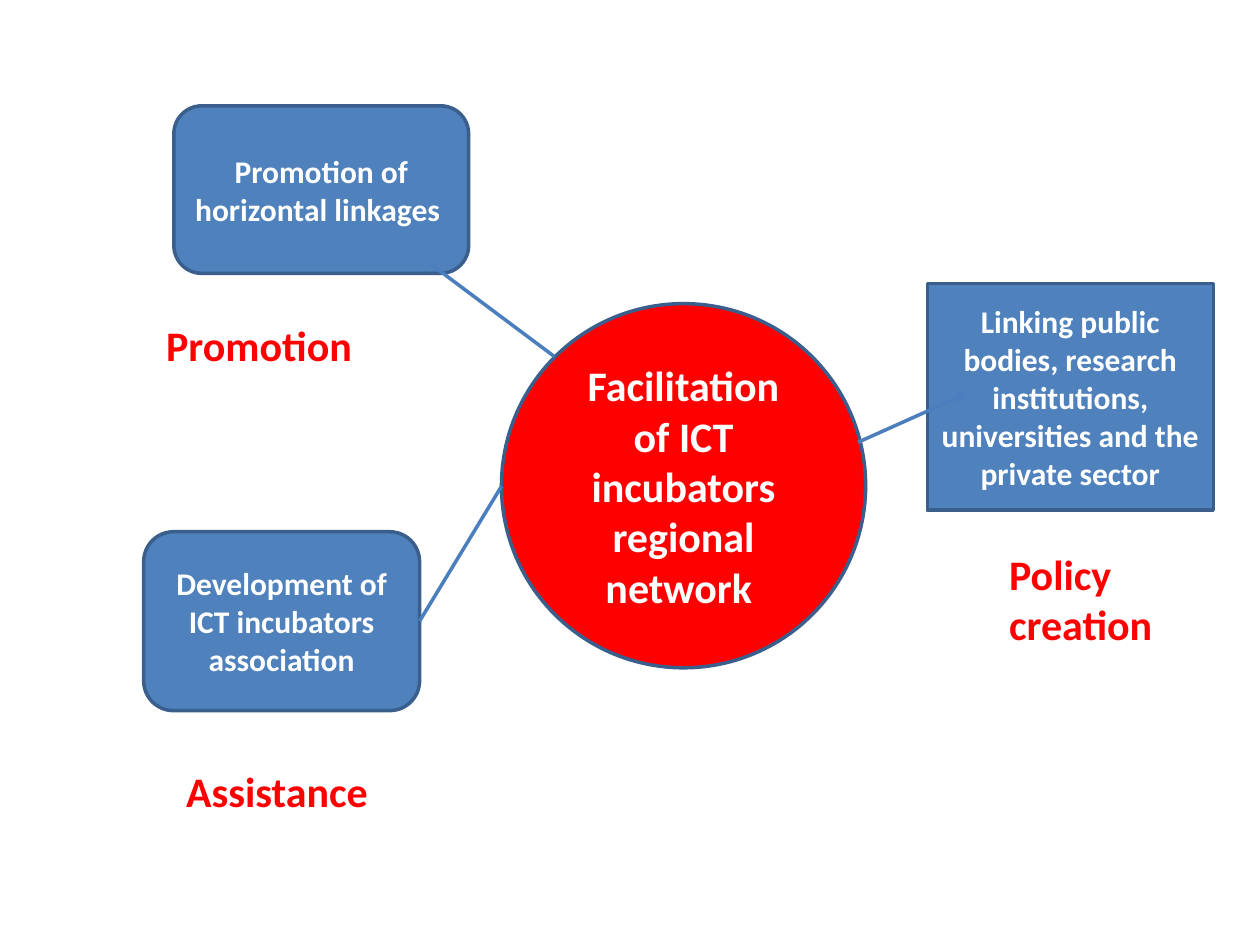
from lxml import etree
from pptx import Presentation
from pptx.dml.color import RGBColor
from pptx.enum import shapes, text
from pptx.oxml.ns import qn
from pptx.util import Inches, Pt

COLORS = {"red": "FF0000", "blue": "4F81BD", "outline": "3A5F8C",
          "link": "4B7EBC", "white": "FFFFFF"}
SHAPE = shapes.MSO_SHAPE


def color(name):
    return RGBColor.from_string(COLORS[name])


def write(frame, wording, size, font_color):
    """Fill a wrapping text frame with one bold paragraph and return it."""
    frame.word_wrap = True
    paragraph = frame.paragraphs[0]
    paragraph.text = wording
    font = paragraph.font
    font.name, font.size, font.bold = "Calibri", Pt(size), True
    font.color.rgb = color(font_color)
    return paragraph


prs = Presentation()
prs.slide_width, prs.slide_height = Inches(10), Inches(7.5)
slide = prs.slides.add_slide(prs.slide_layouts[6])

# Central network and the activities around it
nodes = [
    (SHAPE.OVAL, "Facilitation of ICT incubators regional network ",
     (3.98, 2.41, 2.89, 2.89), "red", 24),
    (SHAPE.ROUNDED_RECTANGLE, "Promotion of horizontal linkages ",
     (1.38, 0.84, 2.34, 1.33), "blue", 18),
    (SHAPE.ROUNDED_RECTANGLE, "Development of ICT incubators association",
     (1.14, 4.22, 2.19, 1.42), "blue", 18),
    (SHAPE.RECTANGLE,
     "Linking public bodies, research institutions, universities and the private sector",
     (7.36, 2.25, 2.27, 1.8), "blue", 18),
]
for preset, wording, place, fill, size in nodes:
    node = slide.shapes.add_shape(preset, *map(Inches, place))
    node.shadow.inherit = False
    node.fill.solid()
    node.fill.fore_color.rgb = color(fill)
    node.line.color.rgb = color("outline")
    node.line.width = Pt(2)
    node.text_frame.vertical_anchor = text.MSO_ANCHOR.MIDDLE
    write(node.text_frame, wording, size, "white").alignment = text.PP_ALIGN.CENTER

# Links between the network and the activities; the last is an arrow
links = [
    ((3.41, 2.09, 4.4, 2.83), False),
    ((3.33, 4.93, 3.98, 3.86), False),
    ((6.81, 3.51, 7.68, 3.12), True),
]
for ends, has_arrow in links:
    link = slide.shapes.add_connector(shapes.MSO_CONNECTOR.STRAIGHT, *map(Inches, ends))
    link.line.color.rgb = color("link")
    link.line.width = Pt(2)
    properties = link.element.spPr
    if has_arrow:
        etree.SubElement(properties.find(qn("a:ln")), qn("a:tailEnd"), type="arrow")
    etree.SubElement(properties, qn("a:effectLst"))

# Role of each activity
roles = [
    ("Assistance", (1.38, 6.03, 2.57, 0.5)),
    ("Policy creation", (7.91, 4.3, 1.72, 0.91)),
    ("Promotion", (1.22, 2.49, 1.72, 0.5)),
]
for wording, place in roles:
    role = slide.shapes.add_textbox(*map(Inches, place))
    role.text_frame.auto_size = text.MSO_AUTO_SIZE.SHAPE_TO_FIT_TEXT
    write(role.text_frame, wording, 24, "red")

prs.save("out.pptx")
